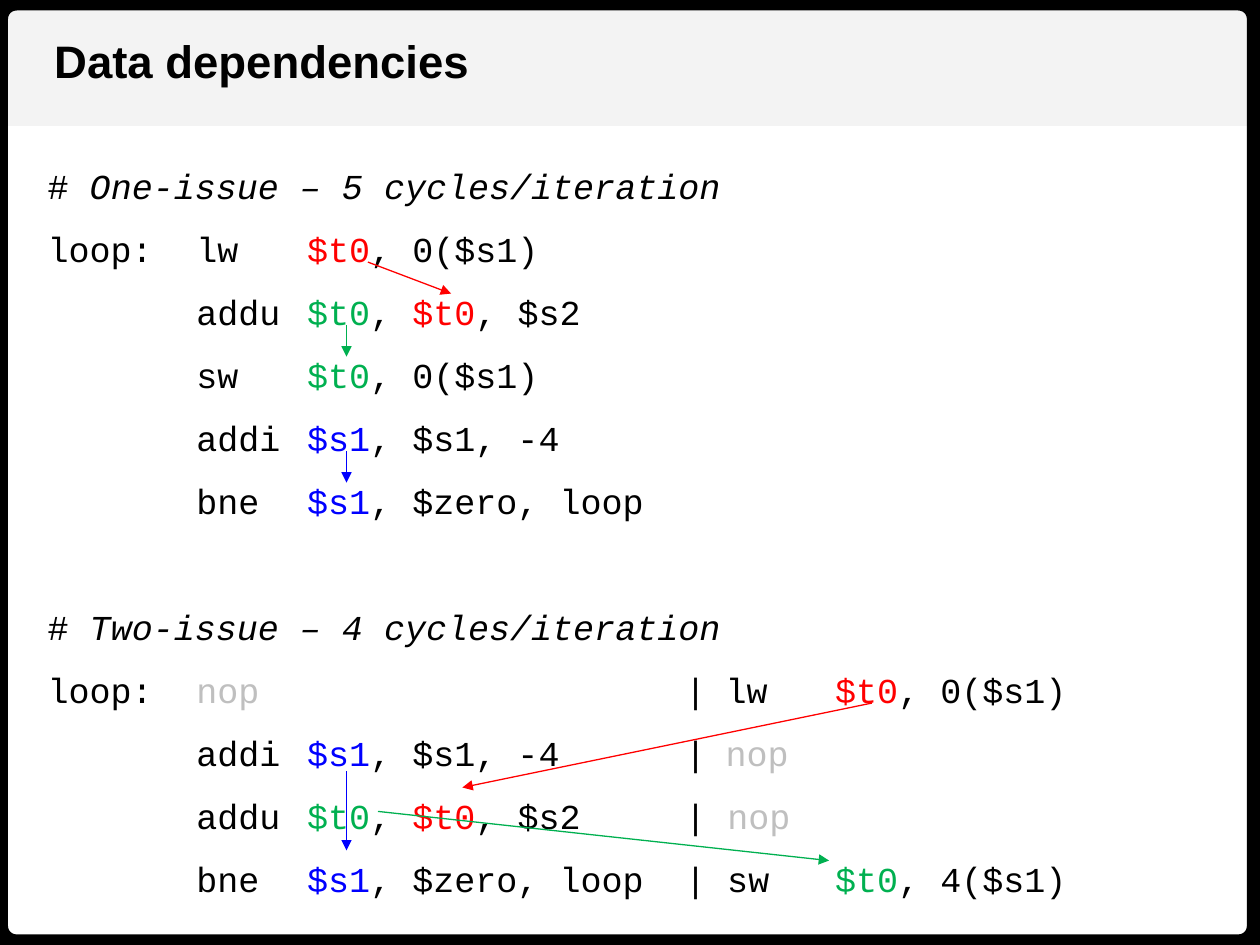
import pptx
import pptx.dml.color
import pptx.enum.shapes
import pptx.enum.text
import pptx.oxml.ns
import pptx.util
from lxml import etree

Inches = pptx.util.Inches
Pt = pptx.util.Pt
RGBColor = pptx.dml.color.RGBColor
Shape = pptx.enum.shapes.MSO_SHAPE
qn = pptx.oxml.ns.qn

BLACK = RGBColor(0x00, 0x00, 0x00)
RED = RGBColor(0xFF, 0x00, 0x00)
GREEN = RGBColor(0x00, 0xB0, 0x50)
BLUE = RGBColor(0x00, 0x00, 0xFF)
GRAY = RGBColor(0xBF, 0xBF, 0xBF)
BAND = RGBColor(0xF3, 0xF3, 0xF3)

TAB_STOPS = (1.18, 2.06, 5.06, 5.38, 6.25)

ONE_ISSUE = [
    ["loop:\tlw\t", ("$t0", RED), ", 0($s1)"],
    ["\taddu\t", ("$t0", GREEN), ", ", ("$t0", RED), ", $s2"],
    ["\tsw\t", ("$t0", GREEN), ", 0($s1)"],
    ["\taddi\t", ("$s1", BLUE), ", $s1, -4"],
    ["\tbne\t", ("$s1", BLUE), ", $zero, loop"],
]
TWO_ISSUE = [
    ["loop:\t", ("nop", GRAY), "\t\t|\tlw\t", ("$t0", RED), ", 0($s1)"],
    ["\taddi\t", ("$s1", BLUE), ", $s1, -4\t|\t", ("nop", GRAY)],
    ["\taddu\t", ("$t0", GREEN), ", ", ("$t0", RED), ", $s2\t| ", ("nop", GRAY)],
    ["\tbne\t", ("$s1", BLUE), ", $zero, loop\t| sw\t", ("$t0", GREEN), ", 4($s1)"],
]
DEPENDENCIES = [
    ((2.92, 2.08), (3.58, 2.33), RED),
    ((2.75, 2.58), (2.75, 2.83), GREEN),
    ((2.75, 3.58), (2.75, 3.83), BLUE),
    ((6.92, 5.58), (3.67, 6.25), RED),
    ((2.75, 6.12), (2.75, 6.75), BLUE),
    ((3, 6.44), (6.58, 6.83), GREEN),
]


def add_text(paragraph, text, font="Courier New", size=20, color=BLACK, bold=False, italic=False):
    run = paragraph.add_run()
    run.text = text
    run.font.name = font
    run.font.size = Pt(size)
    run.font.color.rgb = color
    run.font.bold = bold
    run.font.italic = italic


class SlideBuilder:
    """Holds the code style and the slide being filled."""

    line_spacing = 1.5
    section_gap = 36

    def __init__(self, slide):
        self.slide = slide

    def backdrop(self, kind, left, top, width, height, level):
        """Add an unstyled shape behind the text, at the given level from the back."""
        shape = self.slide.shapes.add_shape(
            kind, Inches(left), Inches(top), Inches(width), Inches(height))
        shape.shadow.inherit = False
        shape.fill.background()
        shape.line.fill.background()
        tree = shape._element.getparent()
        tree.insert(2 + level, shape._element)
        return shape

    def title(self, text):
        shape = self.slide.shapes.title
        shape.left, shape.top = Inches(0.33), Inches(0.21)
        shape.width, shape.height = Inches(3.53), Inches(0.54)
        frame = shape.text_frame
        frame.word_wrap = False
        frame.vertical_anchor = pptx.enum.text.MSO_ANCHOR.TOP
        paragraph = frame.paragraphs[0]
        paragraph.alignment = pptx.enum.text.PP_ALIGN.LEFT
        add_text(paragraph, text, font="Arial", size=26, bold=True)

    def code_paragraph(self, paragraph, space_before=0):
        paragraph.line_spacing = self.line_spacing
        paragraph.space_before = Pt(space_before)
        tabs = etree.SubElement(paragraph._p.get_or_add_pPr(), qn("a:tabLst"))
        for stop in TAB_STOPS:
            etree.SubElement(tabs, qn("a:tab"), pos=str(Inches(stop)), algn="l")

    def code(self, sections):
        """Add the listing as a text box, where the tab stops hold its columns."""
        shape = self.slide.shapes.add_textbox(
            Inches(0.28), Inches(1.09), Inches(9.39), Inches(6.16))
        frame = shape.text_frame
        frame.word_wrap = True
        for number, (heading, lines) in enumerate(sections):
            paragraph = frame.add_paragraph() if number else frame.paragraphs[0]
            self.code_paragraph(paragraph, self.section_gap if number else 0)
            add_text(paragraph, "# ")
            add_text(paragraph, heading, italic=True)
            for line in lines:
                paragraph = frame.add_paragraph()
                self.code_paragraph(paragraph)
                for part in line:
                    text, color = (part, BLACK) if isinstance(part, str) else part
                    add_text(paragraph, text, color=color)

    def arrow(self, start, end, color):
        connector = self.slide.shapes.add_connector(
            pptx.enum.shapes.MSO_CONNECTOR.STRAIGHT,
            *(Inches(value) for value in start + end))
        connector.line.color.rgb = color
        connector.line.width = Pt(0.75)
        etree.SubElement(connector.line._get_or_add_ln(), qn("a:tailEnd"), type="triangle")
        etree.SubElement(connector._element.spPr, qn("a:effectLst"))


def main():
    presentation = pptx.Presentation()
    presentation.slide_width, presentation.slide_height = Inches(10), Inches(7.5)
    builder = SlideBuilder(presentation.slides.add_slide(presentation.slide_layouts[5]))

    band = builder.backdrop(Shape.RECTANGLE, 0, 0, 10, 1, level=0)
    band.fill.solid()
    band.fill.fore_color.rgb = BAND
    border = builder.backdrop(Shape.ROUNDED_RECTANGLE, -0.02, 0, 10, 7.5, level=1)
    border.adjustments[0] = 0.02
    border.line.color.rgb = BLACK
    border.line.width = Pt(12)

    builder.title("Data dependencies")
    builder.code([
        ("One-issue – 5 cycles/iteration", ONE_ISSUE),
        ("Two-issue – 4 cycles/iteration", TWO_ISSUE),
    ])
    for start, end, color in DEPENDENCIES:
        builder.arrow(start, end, color)
    presentation.save("out.pptx")


if __name__ == "__main__":
    main()
